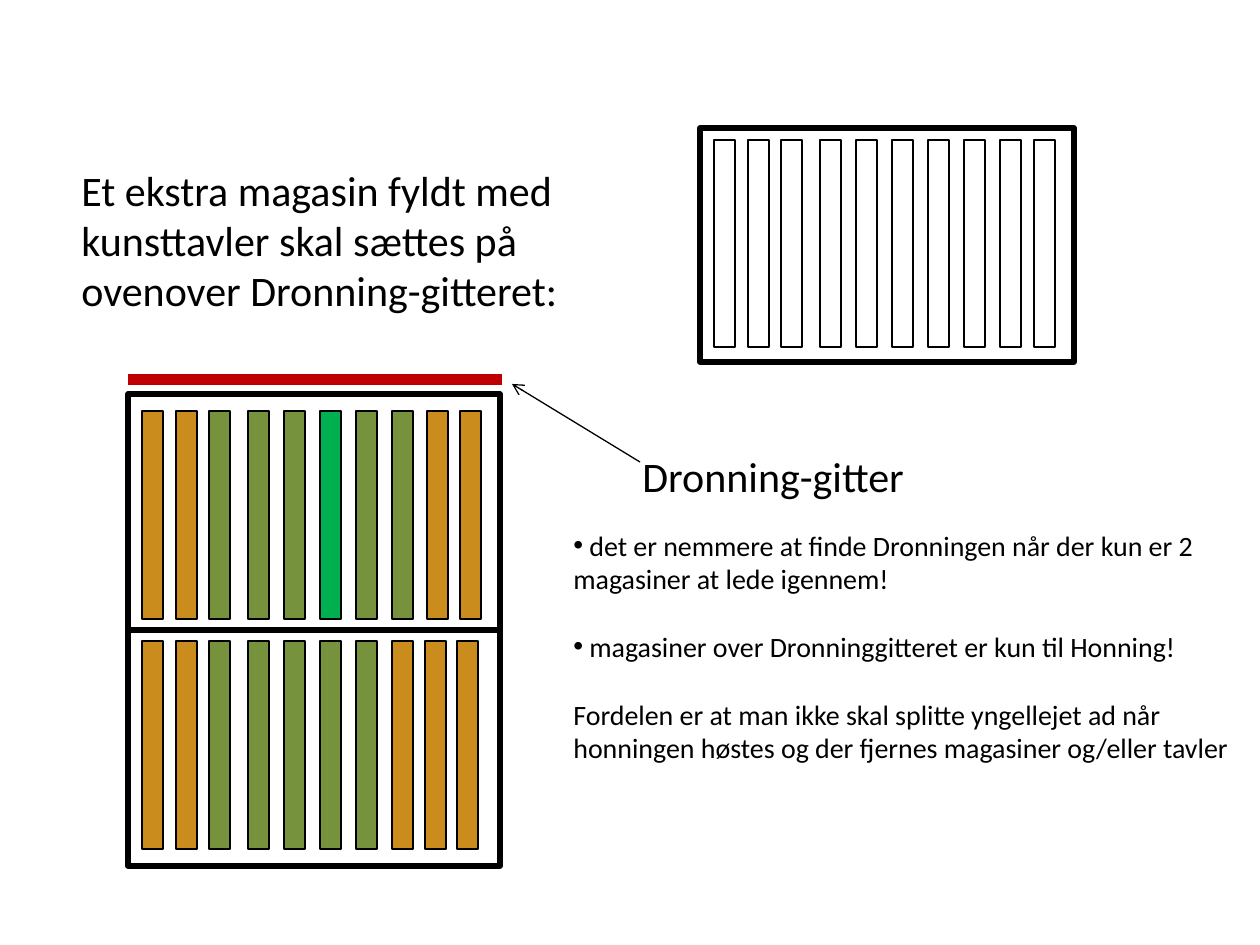
from pptx import Presentation
from pptx.dml.color import RGBColor
from pptx.enum.shapes import MSO_CONNECTOR, MSO_SHAPE
from pptx.enum.text import MSO_AUTO_SIZE
from pptx.oxml.ns import qn
from pptx.util import Emu, Pt
from lxml.etree import SubElement

PX = 914400 / 126
FONT = "Calibri"
BLACK = RGBColor(0, 0, 0)
WHITE = RGBColor(255, 255, 255)
RED = RGBColor(0xC0, 0, 0)
HONEY = RGBColor(0xCA, 0x8C, 0x1C)
BROOD = RGBColor(0x76, 0x92, 0x3C)
QUEEN = RGBColor(0, 0xB0, 0x50)

COMB_OFFSETS = [14, 48, 81, 120, 156, 192, 228, 264]
COMB_WIDTH = 21
UPPER_COMBS = [HONEY] * 2 + [BROOD] * 3 + [QUEEN] + [BROOD] * 2 + [HONEY] * 2
LOWER_COMBS = [HONEY] * 2 + [BROOD] * 5 + [HONEY] * 3
EMPTY_COMBS = [None] * 10


def px(*lengths):
    return [Emu(round(length * PX)) for length in lengths]


def add_block(shapes, bounds, fill, line_width=None, kind=MSO_SHAPE.RECTANGLE):
    block = shapes.add_shape(kind, *px(*bounds))
    block.shadow.inherit = False
    if fill is None:
        block.fill.background()
    else:
        block.fill.solid()
        block.fill.fore_color.rgb = fill
    if line_width is None:
        block.line.fill.background()
    else:
        block.line.color.rgb = BLACK
        block.line.width = Pt(line_width)


def add_magazine(page, bounds, comb_top, comb_height, last_offsets, colors):
    left, top = bounds[:2]
    shapes = page.shapes.add_group_shape().shapes
    add_block(shapes, bounds, WHITE, 3)
    for offset, color in zip(COMB_OFFSETS + last_offsets, colors):
        comb = (left + offset, top + comb_top, COMB_WIDTH, comb_height)
        add_block(shapes, comb, color, 0.75)


def add_arrow(page, start, end):
    arrow = page.shapes.add_connector(MSO_CONNECTOR.STRAIGHT, *px(*start, *end))
    arrow.line.color.rgb = BLACK
    arrow.line.width = Pt(0.75)
    SubElement(arrow.line._get_or_add_ln(), qn("a:tailEnd"), type="arrow")
    SubElement(arrow._element.spPr, qn("a:effectLst"))


def add_text(page, bounds, size, text, bullets=0, gap=0):
    box = page.shapes.add_textbox(*px(*bounds))
    frame = box.text_frame
    frame.word_wrap = True
    frame.auto_size = MSO_AUTO_SIZE.SHAPE_TO_FIT_TEXT
    frame.text = text
    for index, para in enumerate(frame.paragraphs):
        if index:
            para.space_before = Pt(gap)
        if index < bullets:
            properties = para._p.get_or_add_pPr()
            SubElement(properties, qn("a:buFont"), typeface="Arial")
            SubElement(properties, qn("a:buChar"), char="•")
        for span in para.runs:
            span.font.name = FONT
            span.font.size = Pt(size)
            span.font.color.rgb = BLACK


def main():
    deck = Presentation()
    deck.slide_width, deck.slide_height = px(1260, 945)
    page = deck.slides.add_slide(deck.slide_layouts[6])

    add_magazine(page, (128, 630, 372, 236), 11, 208, [297, 329], LOWER_COMBS)
    add_magazine(page, (128, 394, 372, 236), 17, 208, [299, 332], UPPER_COMBS)
    add_block(page.shapes, (128, 374, 374, 11), RED, kind=MSO_SHAPE.LINE_CALLOUT_1)
    add_magazine(page, (700, 128, 374, 234), 12, 207, [300, 334], EMPTY_COMBS)

    add_text(page, (630, 444, 374, 64), 24, "Dronning-gitter")
    add_arrow(page, (640, 462), (512, 384))
    add_text(
        page, (561, 522, 699, 251), 16,
        " det er nemmere at finde Dronningen når der kun er 2 magasiner at lede igennem!\n"
        " magasiner over Dronninggitteret er kun til Honning!\n"
        "Fordelen er at man ikke skal splitte yngellejet ad når honningen høstes "
        "og der fjernes magasiner og/eller tavler",
        bullets=2, gap=19.5,
    )
    add_text(
        page, (69, 158, 581, 165), 24,
        "Et ekstra magasin fyldt med kunsttavler skal sættes på ovenover Dronning-gitteret:",
    )
    deck.save("out.pptx")


if __name__ == "__main__":
    main()
